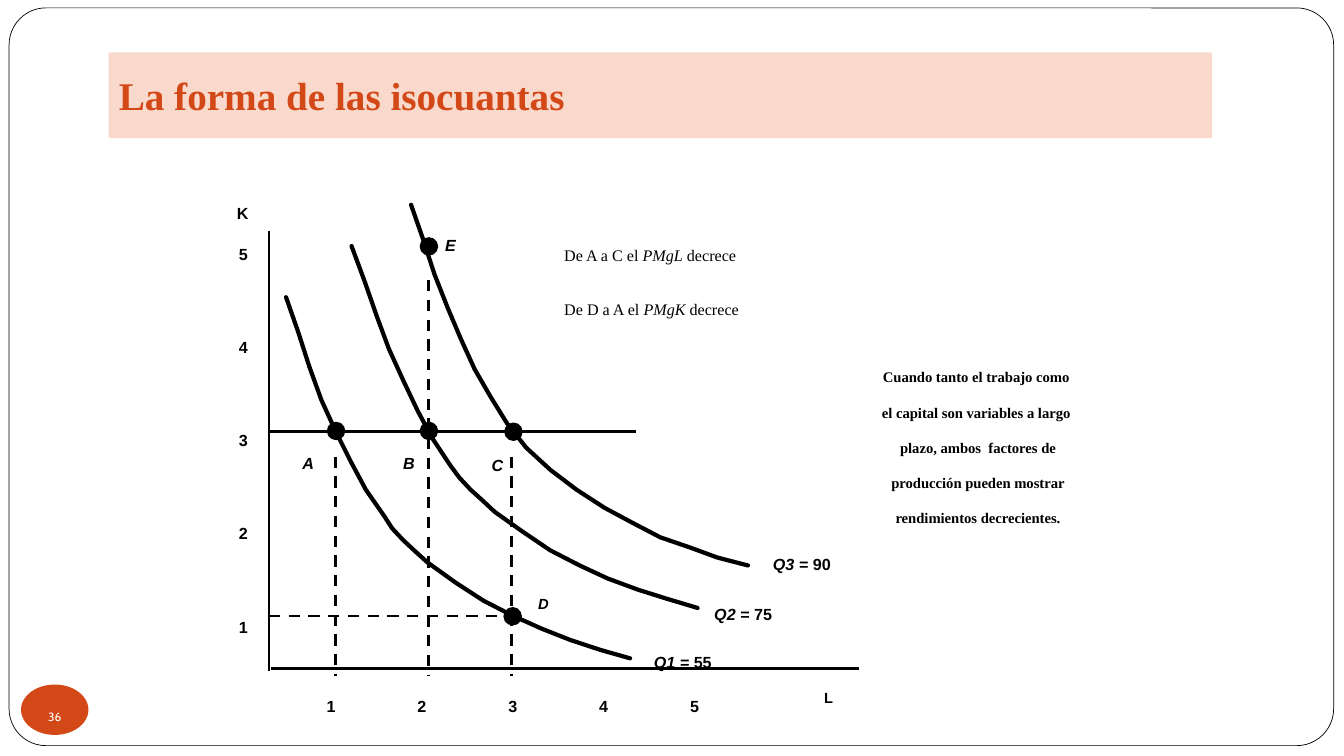
import dataclasses

import pptx
import pptx.dml.color
import pptx.enum.dml
import pptx.enum.shapes
import pptx.enum.text
import pptx.oxml
import pptx.util

Cm, Pt = pptx.util.Cm, pptx.util.Pt
SHAPE = pptx.enum.shapes.MSO_SHAPE
ALIGN = pptx.enum.text.PP_ALIGN
EMPTY_EFFECTS = ('<a:effectLst xmlns:a='
                 '"http://schemas.openxmlformats.org/drawingml/2006/main"/>')


@dataclasses.dataclass(frozen=True)
class Theme:
    ink: str = "000000"
    paper: str = "FFFFFF"
    accent: str = "D34817"
    band: str = "FAD9CD"
    serif: str = "Times New Roman"
    sans: str = "Arial"
    number_font: str = "Cabin"
    title_size: float = 28
    label_size: float = 11.5
    small_size: float = 10.5
    number_size: float = 8.5
    leading: float = 2.0


class Board:
    """Draws on one slide with one theme; all lengths are in centimetres."""

    def __init__(self, slide, theme):
        self.slide, self.theme = slide, theme

    def rgb(self, value):
        return pptx.dml.color.RGBColor.from_string(value)

    def paint(self, shape, fill, line=None, width=1):
        shape.shadow.inherit = False
        if fill:
            shape.fill.solid()
            shape.fill.fore_color.rgb = self.rgb(fill)
        else:
            shape.fill.background()
        if line:
            shape.line.color.rgb = self.rgb(line)
            shape.line.width = Pt(width)
        else:
            shape.line.fill.background()

    def add_runs(self, paragraph, pieces, font, size, color, bold=False):
        for text, italic in pieces:
            run = paragraph.add_run()
            run.text = text
            run.font.name, run.font.size = font, Pt(size)
            run.font.bold, run.font.italic = bold, italic
            run.font.color.rgb = self.rgb(color)

    def title(self, text, box):
        title = self.slide.shapes.title
        title.left, title.top, title.width, title.height = map(Cm, box)
        self.paint(title, self.theme.band)
        title.text_frame.vertical_anchor = pptx.enum.text.MSO_ANCHOR.MIDDLE
        paragraph = title.text_frame.paragraphs[0]
        paragraph.alignment = ALIGN.LEFT
        self.add_runs(paragraph, [(text, False)], self.theme.serif,
                      self.theme.title_size, self.theme.accent, True)

    def shape(self, kind, box, fill, line=None, width=1):
        shape = self.slide.shapes.add_shape(kind, *map(Cm, box))
        self.paint(shape, fill, line, width)
        return shape

    def text(self, lines, box, font, size, bold=False, align=ALIGN.LEFT, gap=0):
        frame = self.slide.shapes.add_textbox(*map(Cm, box)).text_frame
        frame.word_wrap = True
        for index, pieces in enumerate(lines):
            paragraph = frame.add_paragraph() if index else frame.paragraphs[0]
            paragraph.alignment = align
            paragraph.line_spacing = self.theme.leading
            if index:
                paragraph.space_before = Pt(gap)
            self.add_runs(paragraph, pieces, font, size, self.theme.ink, bold)

    def label(self, pieces, left, top, width=1.02, size=None):
        self.text([pieces], (left, top, width, 1.09), self.theme.sans,
                  size or self.theme.label_size, True)

    def line(self, x1, y1, x2, y2, dashed=False):
        line = self.slide.shapes.add_connector(
            pptx.enum.shapes.MSO_CONNECTOR.STRAIGHT, *map(Cm, (x1, y1, x2, y2)))
        line.line.color.rgb = self.rgb(self.theme.ink)
        line.line.width = Pt(2)
        if dashed:
            line.line.dash_style = pptx.enum.dml.MSO_LINE.DASH
        line._element.spPr.append(pptx.oxml.parse_xml(EMPTY_EFFECTS))

    def curve(self, points):
        start, *rest = [(Cm(x), Cm(y)) for x, y in points]
        builder = self.slide.shapes.build_freeform(*start)
        builder.add_line_segments(rest, close=False)
        curve = builder.convert_to_shape()
        self.paint(curve, None, self.theme.ink, 3)
        curve.line._get_or_add_ln().set("cap", "rnd")

    def dot(self, x, y, size=0.43):
        self.shape(SHAPE.OVAL, (x - size / 2, y - size / 2, size, size),
                   self.theme.ink, self.theme.ink)

    def page_number(self, number, box):
        badge = self.shape(SHAPE.OVAL, box, self.theme.accent)
        frame = badge.text_frame
        frame.margin_left = frame.margin_right = 0
        frame.margin_top = frame.margin_bottom = 0
        frame.word_wrap = False
        frame.vertical_anchor = pptx.enum.text.MSO_ANCHOR.MIDDLE
        paragraph = frame.paragraphs[0]
        paragraph.alignment = ALIGN.CENTER
        paragraph.line_spacing = self.theme.leading
        self.add_runs(paragraph, [(number, False)], self.theme.number_font,
                      self.theme.number_size, self.theme.paper)


# Isoquants: name, output, label corner, points
ISOQUANTS = [
    ("Q1", "55", (16.23, 15.82), [
        (7.21, 7.49), (7.52, 8.38), (7.8, 9.25), (8.1, 10.08), (8.46, 10.87),
        (8.84, 11.63), (9.22, 12.34), (9.68, 13), (9.88, 13.31), (10.16, 13.61),
        (10.46, 13.89), (10.77, 14.17), (11.48, 14.68), (12.19, 15.14),
        (12.93, 15.52), (13.67, 15.85), (14.38, 16.13), (15.14, 16.38),
        (15.88, 16.59)]),
    ("Q2", "75", (17.75, 14.63), [
        (8.86, 6.2), (9.19, 7.09), (9.5, 7.98), (9.8, 8.79), (10.16, 9.58),
        (10.52, 10.34), (10.9, 11.05), (11.35, 11.73), (11.58, 12.04),
        (11.86, 12.34), (12.17, 12.62), (12.47, 12.9), (13.16, 13.39),
        (13.87, 13.87), (14.61, 14.25), (15.32, 14.58), (16.08, 14.86),
        (16.81, 15.09), (17.58, 15.32)]),
    ("Q3", "90", (19.23, 13.36), [
        (10.36, 5.16), (10.67, 6.05), (10.95, 6.91), (11.28, 7.75),
        (11.61, 8.53), (11.96, 9.3), (12.37, 10.01), (12.78, 10.67),
        (13.26, 11.28), (13.87, 11.84), (14.53, 12.34), (15.24, 12.8),
        (15.95, 13.18), (16.64, 13.54), (17.37, 13.79), (18.08, 14.05),
        (18.85, 14.25)]),
]
# Input combinations: name, dot centre, label corner
COMBINATIONS = [
    ("A", (8.47, 10.86), (7.37, 10.82)),
    ("B", (10.81, 10.86), (9.91, 10.82)),
    ("C", (12.94, 10.88), (12.14, 10.87)),
    ("D", (12.92, 15.53), (13.31, 14.43)),
    ("E", (10.81, 6.21), (10.97, 5.33)),
]
ADVICE = ["Cuando tanto el trabajo como ", "el capital son variables a largo ",
          "plazo, ambos  factores de", "producción pueden mostrar",
          "rendimientos decrecientes."]


def main():
    theme = Theme()
    deck = pptx.Presentation()
    deck.slide_width, deck.slide_height = Cm(33.87), Cm(19.05)
    slide = deck.slides.add_slide(deck.slide_layouts[5])
    board = Board(slide, theme)

    # Page frame, behind the title
    frame = board.shape(SHAPE.ROUNDED_RECTANGLE, (0.23, 0.2, 33.38, 18.59),
                        theme.paper, theme.ink, 0.5)
    frame.adjustments[0] = 0.05
    slide.shapes.title._element.addprevious(frame._element)
    board.title("La forma de las isocuantas", (2.74, 1.32, 27.81, 2.16))

    # Axes and their labels
    board.line(6.78, 5.82, 6.78, 16.92)
    board.line(6.83, 16.84, 21.64, 16.84)
    board.label([("K", False)], 5.72, 4.52)
    board.label([("L", False)], 20.52, 16.79, size=theme.small_size)
    for step in range(5):
        units = [(str(step + 1), False)]
        board.label(units, 5.77, 14.94 - 2.35 * step)
        board.label(units, 7.98 + 2.29 * step, 16.94)

    # Isoquants
    for name, output, corner, points in ISOQUANTS:
        board.curve(points)
        board.label([(name + " = ", True), (output, False)], *corner, width=2.87)

    # Guide lines
    board.line(6.78, 10.87, 16.03, 10.87)
    board.line(6.78, 15.52, 12.52, 15.52, dashed=True)
    for x, top in [(8.46, 11.51), (10.8, 7.06), (12.9, 11.51)]:
        board.line(x, top, x, 17.04, dashed=True)

    # Input combinations
    for name, centre, corner in COMBINATIONS:
        board.dot(*centre)
        board.label([(name, True)], *corner,
                    size=theme.small_size if name == "D" else None)

    # Remarks
    remarks = [[(f"De {start} a {end} el ", False), (product, True),
                (" decrece", False)]
               for start, end, product in [("A", "C", "PMgL"), ("D", "A", "PMgK")]]
    board.text(remarks, (13.97, 5.56, 9.09, 2.39), theme.serif,
               theme.label_size, gap=11.5)
    board.text([[(line, False)] for line in ADVICE], (20.27, 8.71, 8.76, 4.09),
               theme.serif, theme.small_size, True, ALIGN.CENTER)

    board.page_number("36", (0.53, 17.25, 1.7, 1.27))
    deck.save("out.pptx")


if __name__ == "__main__":
    main()
